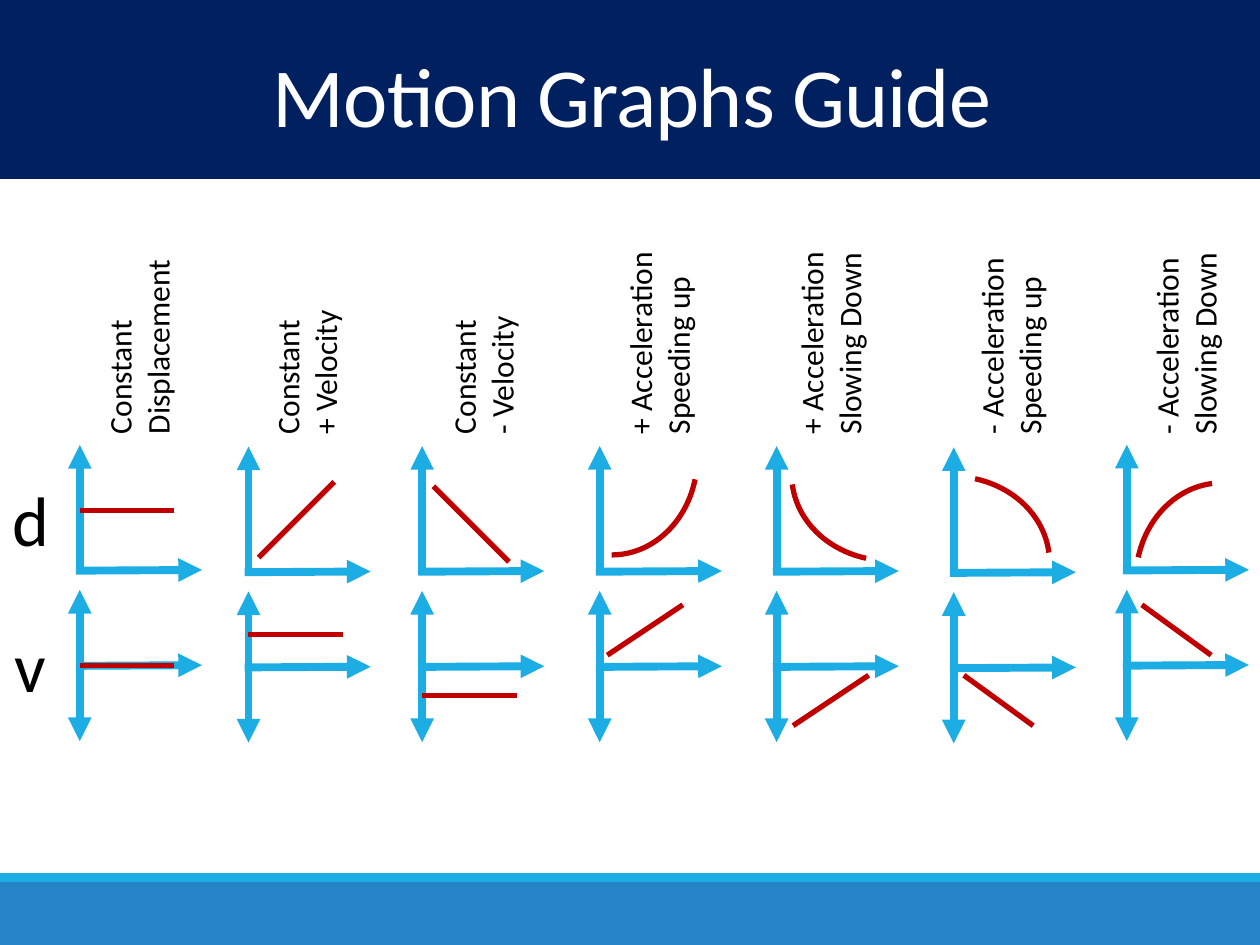
from lxml.etree import SubElement
from pptx import Presentation
from pptx.dml.color import RGBColor
from pptx.enum.shapes import MSO_CONNECTOR, MSO_SHAPE
from pptx.enum.text import MSO_ANCHOR, MSO_AUTO_SIZE, PP_ALIGN
from pptx.oxml.ns import qn
from pptx.util import Pt

THEME = {
    "font": "Calibri",
    "navy": "002060", "cyan": "1CADE4", "blue": "2683C6",
    "red": "C00000", "black": "000000", "white": "FFFFFF",
    "title": 48, "row": 40, "label": 18,
    "axis_width": 4.5, "curve_width": 3, "title_tracking": "-50",
}

TITLE = "Motion Graphs Guide"
ROW_LABELS = [("d", 0, 268.5, 35.3), ("v", 1.4, 352, 32.4)]  # text, left, top, width
BANDS = [  # top, height, colour
    (504, 36, "blue"),
    (499, 5, "cyan"),
    (0, 102.2, "navy"),
]

# Lines are x1, y1, x2, y2 and arcs are left, top, rotation, start, end,
# all measured from the top of the column's upper vertical axis.
ARC_START, ARC_END = 171.37, 212.68
COLUMNS = [
    {"label": ["Constant Displacement"], "axis": (45.6, 254.3), "label_x": 79.2,
     "lines": [(0, 37.4, 54, 37.4), (0, 126, 54, 126)]},
    {"label": ["Constant", "+ Velocity"], "axis": (142, 255.2), "label_x": 175,
     "lines": [(5.8, 63.4, 49, 20.2), (0, 107.3, 54, 107.3)]},
    {"label": ["Constant", "- Velocity"], "axis": (241.2, 254.9), "label_x": 275.8,
     "lines": [(6.5, 23, 49.7, 66.2), (0, 142.6, 54, 142.6)]},
    {"label": ["+ Acceleration", "Speeding up"], "axis": (342.7, 254.9), "label_x": 376.6,
     "lines": [(4.3, 119.5, 47.5, 90.7)], "arc": (-49, -42.5, 90, 170.87, 0)},
    {"label": ["+ Acceleration", "Slowing Down"], "axis": (443.8, 254.9), "label_x": 474.5,
     "lines": [(9.4, 159.8, 52.6, 131)], "arc": (8.6, -32.4, 180, ARC_START, ARC_END)},
    {"label": ["- Acceleration", "Speeding up"], "axis": (545, 255.6), "label_x": 577.4,
     "lines": [(5.8, 130.3, 45.4, 159.1)], "arc": (-56.9, 16.6, 0, ARC_START, ARC_END)},
    {"label": ["- Acceleration", "Slowing Down"], "axis": (643.9, 254.2), "label_x": 677.5,
     "lines": [(8.6, 91.4, 48.2, 120.2)], "arc": (-1.7, 28.6, 270, ARC_START, ARC_END)},
]
AXES = [  # x1, y1, x2, y2, arrowheads
    (0, 72, 0, 0, ["tailEnd"]),
    (-2.2, 71.8, 69.8, 71.4, ["tailEnd"]),
    (0, 169.2, 0, 82.8, ["headEnd", "tailEnd"]),
    (-2.2, 126.2, 69.8, 125.8, ["tailEnd"]),
]
LABEL_BOTTOM, LABEL_LENGTH, LABEL_DEPTH = 255.2, 124, 50.9
ARC_SIZE = (111.6, 97.9)


def color(name):
    return RGBColor.from_string(THEME[name])


def write(frame, paragraphs, size, ink="black", align=PP_ALIGN.LEFT,
          anchor=MSO_ANCHOR.TOP, wrap=True, line_spacing=None):
    frame.word_wrap = wrap
    frame.vertical_anchor = anchor
    for index, words in enumerate(paragraphs):
        paragraph = frame.add_paragraph() if index else frame.paragraphs[0]
        paragraph.alignment = align
        paragraph.line_spacing = line_spacing
        run = paragraph.add_run()
        run.text = words
        run.font.name = THEME["font"]
        run.font.size = Pt(THEME[size])
        run.font.color.rgb = color(ink)


def add_title(slide, header):
    """Fill the title placeholder and lift it in front of the header band."""
    title = slide.shapes.title
    header.element.addnext(title.element)
    title.left, title.top, title.width, title.height = Pt(2.2), Pt(27.9), Pt(717.8), Pt(60.5)
    write(title.text_frame, [TITLE], "title", ink="white", align=PP_ALIGN.CENTER,
          anchor=MSO_ANCHOR.MIDDLE, line_spacing=0.85)
    title.text_frame.auto_size = MSO_AUTO_SIZE.NONE
    for properties in title.element.iter(qn("a:rPr")):
        properties.set("spc", THEME["title_tracking"])


def add_line(slide, origin, ends, ink, width, arrows=()):
    x, y = origin
    x1, y1, x2, y2 = ends
    connector = slide.shapes.add_connector(
        MSO_CONNECTOR.STRAIGHT, Pt(x + x1), Pt(y + y1), Pt(x + x2), Pt(y + y2))
    connector.line.color.rgb = color(ink)
    connector.line.width = Pt(THEME[width])
    properties = connector.element.spPr
    for arrow in arrows:
        SubElement(properties.find(qn("a:ln")), qn(f"a:{arrow}"), type="triangle")
    SubElement(properties, qn("a:effectLst"))


def add_band(slide, top, height, ink):
    band = slide.shapes.add_shape(MSO_SHAPE.RECTANGLE, 0, Pt(top), Pt(720), Pt(height))
    band.shadow.inherit = False
    band.fill.solid()
    band.fill.fore_color.rgb = color(ink)
    band.line.fill.background()
    return band


def add_label(slide, column):
    """Upright label that ends just above the column's graphs."""
    box = slide.shapes.add_textbox(
        Pt(column["label_x"] - LABEL_LENGTH / 2),
        Pt(LABEL_BOTTOM - LABEL_LENGTH / 2 - LABEL_DEPTH / 2),
        Pt(LABEL_LENGTH), Pt(LABEL_DEPTH))
    box.rotation = 270
    write(box.text_frame, column["label"], "label")


def add_arc(slide, origin, left, top, rotation, start, end):
    arc = slide.shapes.add_shape(
        MSO_SHAPE.ARC, Pt(origin[0] + left), Pt(origin[1] + top), *map(Pt, ARC_SIZE))
    arc.rotation = rotation
    arc.adjustments[0], arc.adjustments[1] = start, end
    arc.shadow.inherit = False
    arc.fill.background()
    arc.line.color.rgb = color("red")
    arc.line.width = Pt(THEME["curve_width"])


def main():
    deck = Presentation()
    deck.slide_width, deck.slide_height = Pt(720), Pt(540)
    slide = deck.slides.add_slide(deck.slide_layouts[5])

    *_, header = [add_band(slide, *band) for band in BANDS]
    add_title(slide, header)

    for letter, left, top, width in ROW_LABELS:
        box = slide.shapes.add_textbox(Pt(left), Pt(top), Pt(width), Pt(55.4))
        write(box.text_frame, [letter], "row", wrap=False)

    for column in COLUMNS:
        for *ends, arrows in AXES:
            add_line(slide, column["axis"], ends, "cyan", "axis_width", arrows)
        add_label(slide, column)
        for ends in column["lines"]:
            add_line(slide, column["axis"], ends, "red", "curve_width")
        if "arc" in column:
            add_arc(slide, column["axis"], *column["arc"])
    deck.save("out.pptx")


if __name__ == "__main__":
    main()
